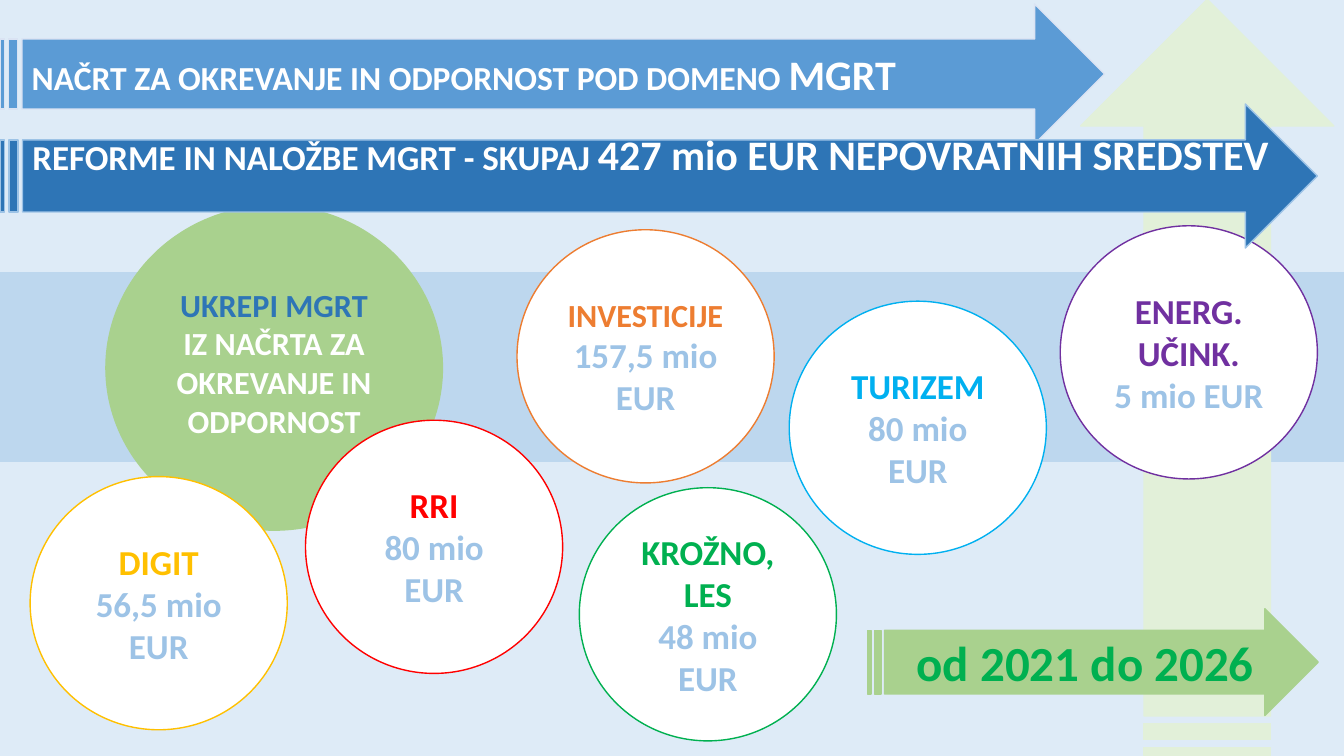
import pptx
import pptx.dml.color
import pptx.enum.shapes
import pptx.enum.text
import pptx.util

Cm = pptx.util.Cm
Shapes = pptx.enum.shapes.MSO_SHAPE
Align = pptx.enum.text.PP_ALIGN


class Theme:
    font = "Calibri"
    white = "FFFFFF"
    background = "DEEBF7"
    band = "BDD7EE"
    amount = "9DC3E6"
    pale_line = "DAE3F3"
    blue = "5B9BD5"
    dark_blue = "2E75B6"
    light_green = "A9D18E"
    pale_green = "E2F0D9"
    green = "00B050"
    yellow = "FFC000"
    red = "FF0000"
    orange = "ED7D31"
    cyan = "00B0F0"
    purple = "7030A0"
    small, heading, normal, large, period = 23, 24, 25, 30, 35


class SlideBuilder:
    def __init__(self, slide, theme):
        self.slide = slide
        self.theme = theme

    def shape(self, kind, box, fill, line):
        """Draw a flat preset shape; box is left, top, width, height in cm."""
        shape = self.slide.shapes.add_shape(kind, *[Cm(length) for length in box])
        shape.shadow.inherit = False
        shape.fill.solid()
        shape.fill.fore_color.rgb = pptx.dml.color.RGBColor.from_string(fill)
        shape.line.color.rgb = pptx.dml.color.RGBColor.from_string(line)
        shape.line.width = pptx.util.Pt(1)
        return shape

    def text(self, shape, paragraphs, align=Align.CENTER):
        """Fill a shape; each paragraph is a list of (text, size, colour) runs."""
        frame = shape.text_frame
        frame.word_wrap = True
        frame.vertical_anchor = pptx.enum.text.MSO_ANCHOR.MIDDLE
        for index, runs in enumerate(paragraphs):
            paragraph = frame.add_paragraph() if index else frame.paragraphs[0]
            paragraph.alignment = align
            for words, size, colour in runs:
                run = paragraph.add_run()
                run.text = words
                run.font.name = self.theme.font
                run.font.size = pptx.util.Pt(size)
                run.font.bold = True
                run.font.color.rgb = pptx.dml.color.RGBColor.from_string(colour)

    def band(self, top, height, colour):
        self.shape(Shapes.FLOWCHART_PROCESS, (0, top, 33.87, height), colour, colour)

    def arrow(self, box, fill, line, runs=(), align=Align.LEFT):
        arrow = self.shape(Shapes.STRIPED_RIGHT_ARROW, box, fill, line)
        if runs:
            self.text(arrow, [runs], align)
        return arrow

    def measure(self, left, top, title, amount, colour, title_size):
        """Draw one white circle with a funding area and its amount."""
        circle = self.shape(Shapes.OVAL, (left, top, 6.48, 6.38), self.theme.white, colour)
        self.text(circle, [[(title, title_size, colour)],
                           [(amount, self.theme.normal, self.theme.amount)]])


def main():
    presentation = pptx.Presentation()
    presentation.slide_width = Cm(33.87)
    presentation.slide_height = Cm(19.05)
    theme = Theme()
    builder = SlideBuilder(presentation.slides.add_slide(presentation.slide_layouts[6]), theme)

    builder.band(0, 19.05, theme.background)
    builder.band(6.88, 4.75, theme.band)

    overview = builder.shape(Shapes.OVAL, (2.67, 5.18, 8.48, 8.18),
                             theme.light_green, theme.light_green)
    builder.text(overview, [[
        ("UKREPI MGRT", theme.small, theme.dark_blue),
        (" IZ NAČRTA ZA OKREVANJE IN ODPORNOST", theme.small, theme.white)]])
    overview.text_frame.margin_bottom = Cm(0.4)

    builder.arrow((0, 0.1, 27.84, 3.53), theme.blue, theme.pale_line, [
        ("NAČRT ZA OKREVANJE IN ODPORNOST POD DOMENO ", theme.heading, theme.white),
        ("MGRT", theme.large, theme.white)])

    upward = builder.arrow((20.9, 6.32, 19.05, 6.38), theme.pale_green, theme.pale_green)
    upward.rotation = 270

    measures = [
        (0.76, 12.01, "DIGIT", "56,5 mio EUR", theme.yellow, theme.normal),
        (19.89, 7.59, "TURIZEM", "80 mio EUR", theme.cyan, theme.normal),
        (26.72, 5.69, "ENERG. UČINK.", "5 mio EUR", theme.purple, theme.normal),
        (7.7, 10.59, "RRI", "80 mio EUR", theme.red, theme.normal),
        (14.6, 12.29, "KROŽNO, LES", "48 mio EUR", theme.green, theme.normal),
        (13.03, 5.79, "INVESTICIJE", "157,5 mio EUR", theme.orange, theme.small),
    ]
    for measure in measures:
        builder.measure(*measure)

    total = builder.arrow((0, 2.62, 33.2, 3.63), theme.dark_blue, theme.amount, [
        ("REFORME IN NALOŽBE MGRT - SKUPAJ ", theme.normal, theme.white),
        ("427 mio EUR NEPOVRATNIH SREDSTEV", theme.large, theme.white)])
    total.text_frame.margin_right = 0
    total.text_frame.margin_bottom = Cm(1.27)

    period = builder.arrow((21.87, 15.34, 11.35, 2.69), theme.light_green, theme.light_green,
                           [("od 2021 do 2026", theme.period, theme.green)], Align.CENTER)
    period.adjustments[0] = 0.595

    presentation.save("out.pptx")


if __name__ == "__main__":
    main()
